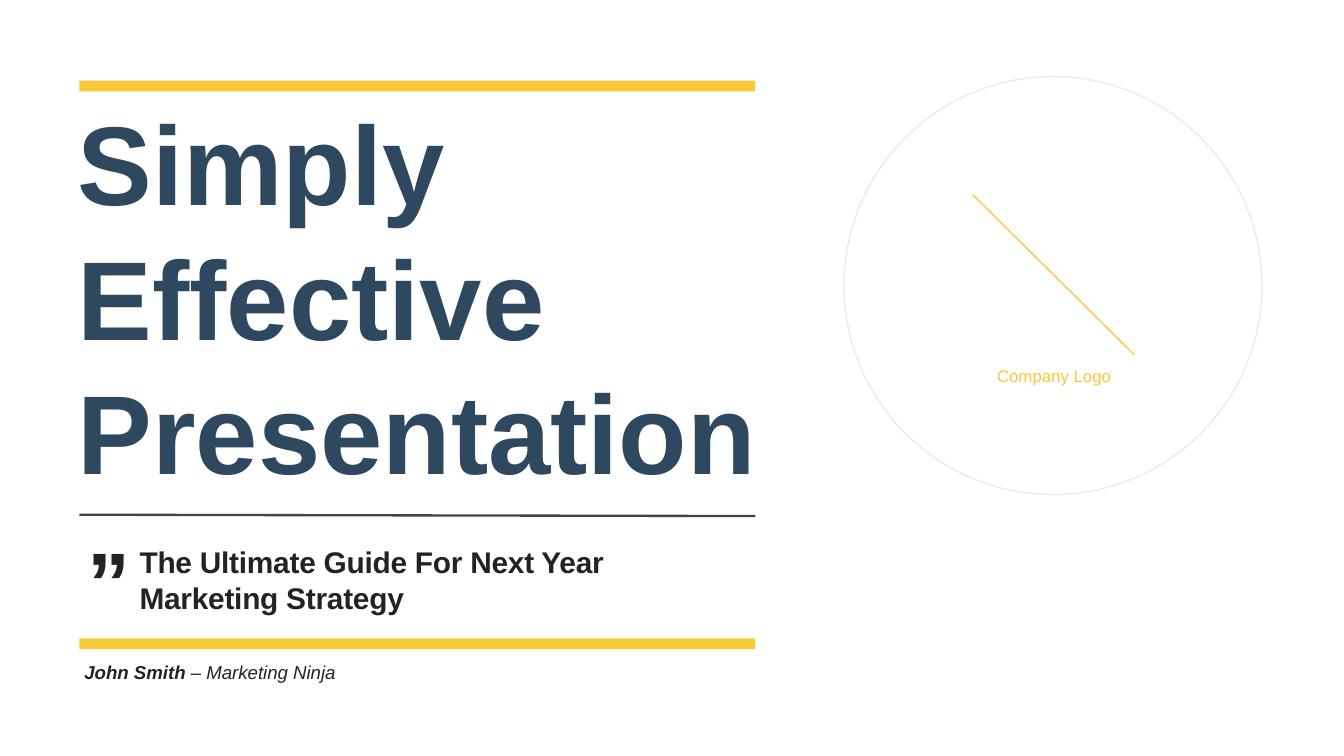
"""Build the title slide of a simple marketing presentation."""
from lxml import etree
from pptx import Presentation
from pptx.dml.color import RGBColor
from pptx.enum.shapes import MSO_CONNECTOR, MSO_SHAPE
from pptx.enum.text import MSO_ANCHOR, MSO_AUTO_SIZE
from pptx.oxml.ns import qn
from pptx.util import Inches, Pt

RECTANGLE, OVAL = MSO_SHAPE.RECTANGLE, MSO_SHAPE.OVAL
STRAIGHT = MSO_CONNECTOR.STRAIGHT
TOP = MSO_ANCHOR.TOP
GROW = MSO_AUTO_SIZE.SHAPE_TO_FIT_TEXT
YELLOW, NAVY, INK = "F8C937", "2E4860", "232323"
GREY, PALE = "444444", "EBEBEB"


def color(value):
    """Turn a hex string into a colour."""
    return RGBColor.from_string(value)


def add_text(paragraphs, left, top, width, height, size, fill=INK, italic=False, spacing=0):
    """Add a text box; each paragraph is a list of (text, bold) spans."""
    box = page.shapes.add_textbox(Inches(left), Inches(top), Inches(width), Inches(height))
    frame = box.text_frame
    frame.word_wrap = True
    frame.auto_size = GROW
    frame.vertical_anchor = TOP
    for index, spans in enumerate(paragraphs):
        para = frame.add_paragraph() if index else frame.paragraphs[0]
        para.line_spacing = Pt(1.2 * size)
        for text, bold in spans:
            span = para.add_run()
            span.text = text
            span.font.name = "Arial"
            span.font.size = Pt(size)
            span.font.bold = bold
            span.font.italic = italic
            span.font.color.rgb = color(fill)
            if spacing:
                span.font._element.set("spc", str(round(spacing * 100)))


deck = Presentation()
deck.slide_width = Inches(10)
deck.slide_height = Inches(10 * 9 / 16)
page = deck.slides.add_slide(deck.slide_layouts[6])

for top in (0.6, 4.75):
    bar = page.shapes.add_shape(RECTANGLE, Inches(0.59), Inches(top), Inches(5.03), Inches(0.08))
    bar.shadow.inherit = False
    bar.fill.solid()
    bar.fill.fore_color.rgb = color(YELLOW)
    bar.line.fill.background()

add_text([[("Simply Effective Presentation", True)]], 0.48, 0.65, 5.38, 3.13, size=60, fill=NAVY)

divider = (0.59, 3.83, 5.62, 3.84), GREY, 1.25
slash = (7.24, 1.45, 8.44, 2.64), YELLOW, 0.75
for ends, line_color, weight in (divider, slash):
    rule = page.shapes.add_connector(STRAIGHT, *[Inches(value) for value in ends])
    rule.line.color.rgb = color(line_color)
    rule.line.width = Pt(weight)
    etree.SubElement(rule._element.spPr, qn("a:effectLst"))

add_text(
    [[("The Ultimate Guide For Next Year", True)], [("Marketing Strategy", True)]],
    0.94, 4, 4.61, 0.64, size=16, spacing=-0.1,
)
add_text([[("”", True)]], 0.55, 3.88, 0.4, 0.88, size=46)
add_text(
    [[("John Smith ", True), ("– Marketing Ninja", False)]],
    0.53, 4.87, 3.23, 0.27, size=10, italic=True,
)
add_text([[("Company Logo", False)]], 7.32, 2.67, 1.58, 0.25, size=9, fill=YELLOW)

circle = page.shapes.add_shape(OVAL, Inches(6.28), Inches(0.57), Inches(3.11), Inches(3.11))
circle.shadow.inherit = False
circle.fill.background()
circle.line.color.rgb = color(PALE)
circle.line.width = Pt(0.75)

deck.save("out.pptx")
